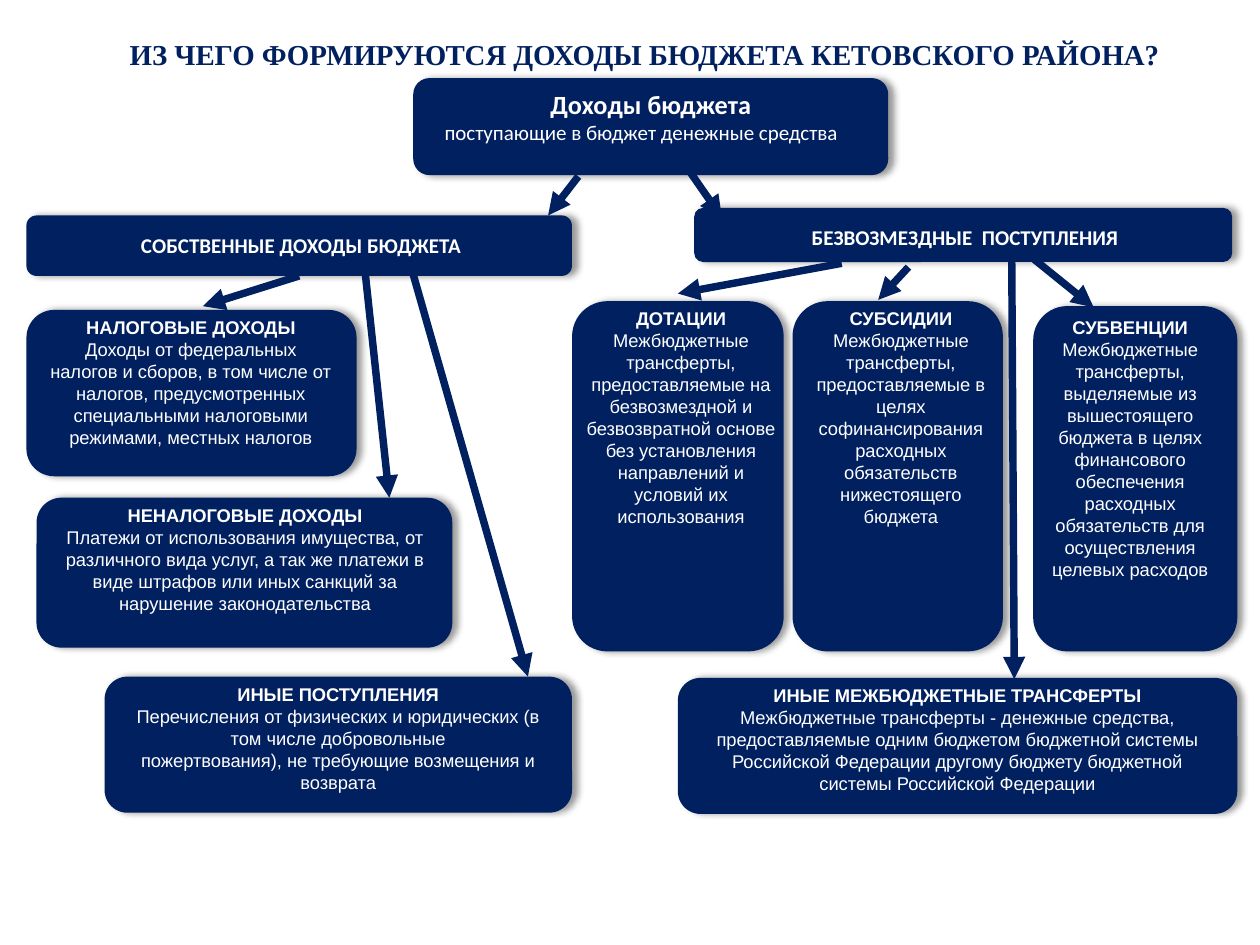
import pptx
import pptx.dml.color
import pptx.enum.shapes
import pptx.enum.text
import pptx.oxml
import pptx.oxml.ns
import pptx.util

PX = 9144  # one px is a hundredth of an inch
THEME = {
    "navy": pptx.dml.color.RGBColor.from_string("002060"),
    "white": pptx.dml.color.RGBColor.from_string("FFFFFF"),
    "title": {"size": 16.5, "font": "Times New Roman"},
    "total": {"size": 15, "font": "Calibri"},
    "branch": {"size": 12, "font": "Calibri"},
    "card": {"size": 10.5, "font": "Arial"},
    "arrow_width": 4.25,
}
CENTER = pptx.enum.text.PP_ALIGN.CENTER
LEFT = pptx.enum.text.PP_ALIGN.LEFT
NAMESPACE = pptx.oxml.ns.nsdecls("a")
SHADOW = (f'<a:effectLst {NAMESPACE}><a:outerShdw blurRad="50800" dist="38100" dir="0" '
          'algn="l" rotWithShape="0"><a:srgbClr val="000000"><a:alpha val="40000"/>'
          '</a:srgbClr></a:outerShdw></a:effectLst>')


def write(para, text, size, font, color=THEME["white"], bold=False, align=CENTER):
    para.alignment = align
    span = para.add_run()
    span.text = text
    span.font.size = pptx.util.Pt(size)
    span.font.name = font
    span.font.bold = bold
    span.font.color.rgb = color


deck = pptx.Presentation()
deck.slide_width, deck.slide_height = 1000 * PX, 750 * PX
page = deck.slides.add_slide(deck.slide_layouts[5])

# Title
title = page.shapes.title
title.left, title.top, title.width, title.height = [n * PX for n in (55, 24, 913, 38)]
title.text_frame.auto_size = pptx.enum.text.MSO_AUTO_SIZE.NONE
title.text_frame.vertical_anchor = pptx.enum.text.MSO_ANCHOR.MIDDLE
write(title.text_frame.paragraphs[0], "ИЗ ЧЕГО ФОРМИРУЮТСЯ ДОХОДЫ БЮДЖЕТА КЕТОВСКОГО РАЙОНА?",
      color=THEME["navy"], bold=True, **THEME["title"])

# Cards: name, box, caption area, heading style, body style, body alignment, texts
cards = [
    ("total", (328, 62, 377, 77), (343, 65, 347, 63), "total", "branch", LEFT,
     ["Доходы бюджета", "поступающие в бюджет денежные средства"]),
    ("own", (21, 171, 433, 48), (36, 180, 406, 36), "branch", "branch", CENTER,
     ["СОБСТВЕННЫЕ ДОХОДЫ БЮДЖЕТА"]),
    ("free", (551, 165, 427, 43), (566, 173, 400, 33), "branch", "branch", CENTER,
     ["БЕЗВОЗМЕЗДНЫЕ  ПОСТУПЛЕНИЯ"]),
    ("tax", (21, 246, 262, 132), (29, 246, 245, 135), "card", "card", CENTER,
     ["НАЛОГОВЫЕ ДОХОДЫ",
      "Доходы от федеральных налогов и сборов, в том числе от налогов, предусмотренных "
      "специальными налоговыми режимами, местных налогов"]),
    ("other income", (83, 537, 371, 108), (95, 537, 347, 91), "card", "card", CENTER,
     ["ИНЫЕ ПОСТУПЛЕНИЯ",
      "Перечисления от физических и юридических (в том числе добровольные",
      "пожертвования), не требующие возмещения и возврата"]),
    ("non-tax", (29, 395, 330, 119), (40, 395, 309, 122), "card", "card", CENTER,
     ["НЕНАЛОГОВЫЕ ДОХОДЫ",
      "Платежи от использования имущества, от различного вида услуг, а так же платежи "
      "в виде штрафов или иных санкций за нарушение законодательства"]),
    ("grants", (454, 239, 168, 278), (452, 239, 177, 187), "card", "card", CENTER,
     ["ДОТАЦИИ",
      "Межбюджетные трансферты, предоставляемые на безвозмездной и безвозвратной "
      "основе без установления направлений и условий их использования"]),
    ("subsidies", (629, 239, 167, 278), (634, 239, 162, 187), "card", "card", CENTER,
     ["СУБСИДИИ",
      "Межбюджетные трансферты, предоставляемые в целях",
      "софинансирования расходных обязательств нижестоящего бюджета"]),
    ("subventions", (820, 243, 162, 274), (821, 246, 152, 263), "card", "card", CENTER,
     ["СУБВЕНЦИИ",
      "Межбюджетные трансферты, выделяемые из вышестоящего бюджета в целях финансового "
      "обеспечения расходных обязательств для осуществления целевых расходов"]),
    ("other transfers", (538, 538, 444, 108), (552, 538, 416, 115), "card", "card", CENTER,
     ["ИНЫЕ МЕЖБЮДЖЕТНЫЕ ТРАНСФЕРТЫ",
      "Межбюджетные трансферты - денежные средства, предоставляемые одним бюджетом "
      "бюджетной системы Российской Федерации другому бюджету бюджетной системы "
      "Российской Федерации"]),
]
boxes = {}
for name, box_area, text_area, heading, body, align, texts in cards:
    group = page.shapes.add_group_shape()
    box = group.shapes.add_shape(pptx.enum.shapes.MSO_SHAPE.ROUNDED_RECTANGLE,
                                 *[n * PX for n in box_area])
    box.fill.solid()
    box.fill.fore_color.rgb = THEME["navy"]
    box.line.fill.background()
    box._element.spPr.append(pptx.oxml.parse_xml(SHADOW))
    boxes[name] = box

    frame = group.shapes.add_textbox(*[n * PX for n in text_area]).text_frame
    frame.word_wrap = True
    write(frame.paragraphs[0], texts[0], bold=True, **THEME[heading])
    for text in texts[1:]:
        write(frame.add_paragraph(), text, align=align, **THEME[body])

# Arrows: start, end, and the box whose bottom middle the start is joined to
arrows = [
    ((459, 140), (435, 171), None),
    ((548, 137), (573, 173), None),
    ((328, 218), (419, 537), None),
    ((290, 218), (309, 395), None),
    ((237, 218), (161, 243), "own"),
    ((668, 209), (538, 233), None),
    ((821, 206), (868, 244), None),
    ((721, 212), (697, 238), None),
    ((803, 208), (805, 539), None),
]
for start, end, source in arrows:
    arrow = page.shapes.add_connector(pptx.enum.shapes.MSO_CONNECTOR.STRAIGHT,
                                      *[n * PX for n in start + end])
    if source:
        arrow.begin_connect(boxes[source], 2)
    arrow.line.color.rgb = THEME["navy"]
    arrow.line.width = pptx.util.Pt(THEME["arrow_width"])
    arrow.line._get_or_add_ln().append(
        pptx.oxml.parse_xml(f'<a:tailEnd {NAMESPACE} type="triangle"/>'))
    arrow._element.spPr.append(pptx.oxml.parse_xml(f"<a:effectLst {NAMESPACE}/>"))

deck.save("out.pptx")
